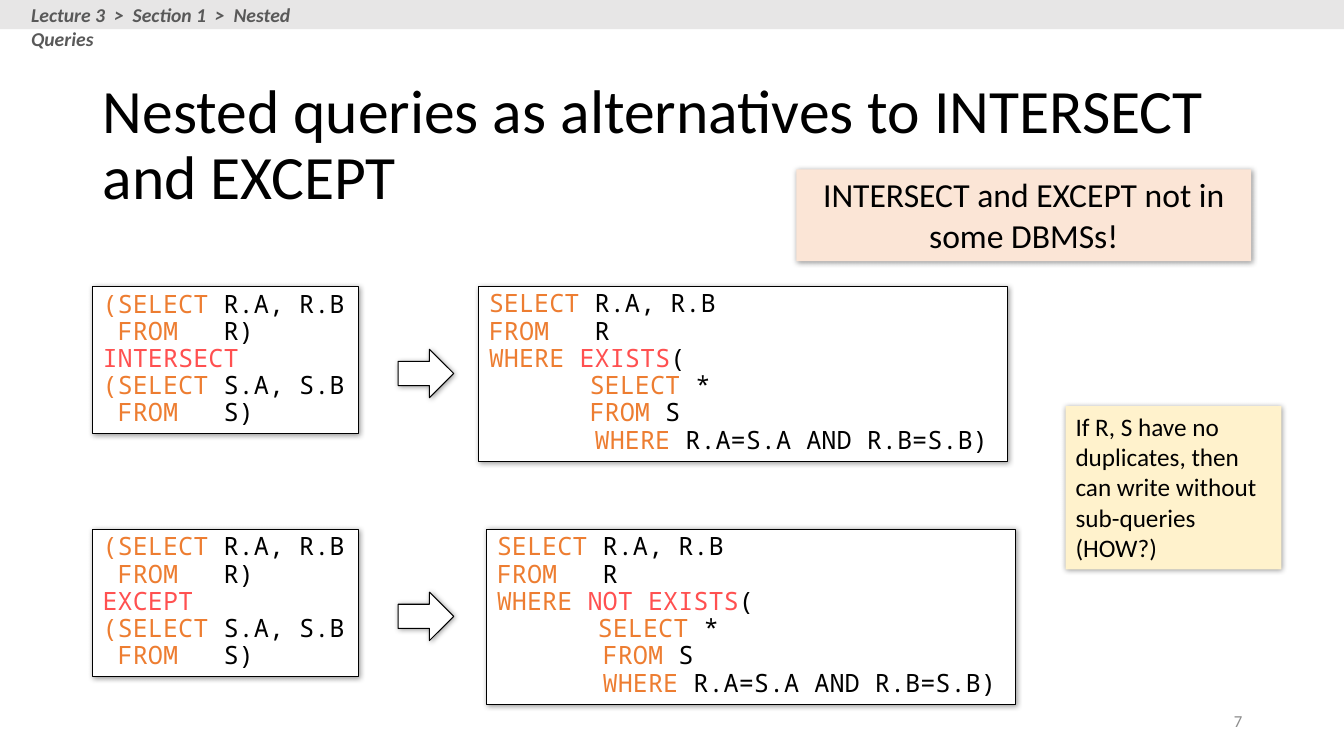
from dataclasses import dataclass

from lxml import etree
from pptx import Presentation
from pptx.dml.color import RGBColor
from pptx.enum.shapes import MSO_SHAPE
from pptx.enum.text import MSO_ANCHOR, MSO_AUTO_SIZE, PP_ALIGN
from pptx.oxml.ns import qn
from pptx.util import Inches, Pt

RECTANGLE, ARROW = MSO_SHAPE.RECTANGLE, MSO_SHAPE.RIGHT_ARROW
LEFT, CENTER, RIGHT = PP_ALIGN.LEFT, PP_ALIGN.CENTER, PP_ALIGN.RIGHT
TOP, MIDDLE = MSO_ANCHOR.TOP, MSO_ANCHOR.MIDDLE
FIXED_SIZE = MSO_AUTO_SIZE.NONE
TITLE_ONLY = 5


@dataclass(frozen=True)
class Theme:
    body_font: str = "Calibri"
    code_font: str = "Noto Sans Mono"
    ink: str = "000000"
    paper: str = "FFFFFF"
    keyword: str = "ED7D31"
    operator: str = "FF5050"
    band: str = "E7E6E6"
    crumb: str = "595959"
    number: str = "8C8C8C"
    callout: str = "FBE5D6"
    note: str = "FFF2CC"
    title_size: int = 44
    callout_size: int = 24
    text_size: int = 18
    crumb_size: int = 14
    number_size: int = 12
    tight_spacing: float = 0.9


class SlideBuilder:
    """Draws on one slide; every area is in percent of the slide's size."""

    def __init__(self, deck, theme):
        self.deck, self.theme = deck, theme
        self.page = deck.slides.add_slide(deck.slide_layouts[TITLE_ONLY])

    def area(self, left, top, width, height):
        across, down = self.deck.slide_width / 100, self.deck.slide_height / 100
        return [round(left * across), round(top * down),
                round(width * across), round(height * down)]

    def add_span(self, para, text, size, color, font=None, strong=False):
        span = para.add_run()
        span.text = text
        span.font.name = font or self.theme.body_font
        span.font.size = Pt(size)
        span.font.color.rgb = RGBColor.from_string(color)
        if strong:
            span.font.bold = span.font.italic = True

    def fill_text(self, box, text, size, color, align=LEFT, anchor=TOP, strong=False):
        frame = box.text_frame
        frame.word_wrap = True
        frame.auto_size = FIXED_SIZE
        frame.vertical_anchor = anchor
        para = frame.paragraphs[0]
        para.alignment = align
        self.add_span(para, text, size, color, strong=strong)
        return para

    def title(self, area, text):
        box = self.page.shapes.title
        box.left, box.top, box.width, box.height = self.area(*area)
        para = self.fill_text(box, text, self.theme.title_size, self.theme.ink,
                              anchor=MIDDLE)
        para.line_spacing = self.theme.tight_spacing

    def label(self, area, text, size, color, **style):
        box = self.page.shapes.add_textbox(*self.area(*area))
        self.fill_text(box, text, size, color, **style)

    def shape(self, kind, area, fill, outlined=False, shadow=True):
        box = self.page.shapes.add_shape(kind, *self.area(*area))
        box.fill.solid()
        box.fill.fore_color.rgb = RGBColor.from_string(fill)
        if outlined:
            box.line.color.rgb = RGBColor.from_string(self.theme.ink)
            box.line.width = Pt(0.75)
        else:
            box.line.fill.background()
        box.shadow.inherit = False
        if shadow:
            effects = box.element.spPr.find(qn("a:effectLst"))
            outer = etree.SubElement(effects, qn("a:outerShdw"), blurRad=str(Pt(4)),
                                     dist=str(Pt(1)), dir="2700000", rotWithShape="0")
            tone = etree.SubElement(outer, qn("a:srgbClr"), val=self.theme.ink)
            etree.SubElement(tone, qn("a:alpha"), val="40000")
        return box

    def card(self, area, fill, text, size, align=LEFT):
        self.fill_text(self.shape(RECTANGLE, area, fill), text, size,
                       self.theme.ink, align)

    def arrow(self, area):
        self.shape(ARROW, area, self.theme.paper, outlined=True)

    def code(self, area, lines):
        """Each line is an indent in inches and its (colour, text) parts."""
        frame = self.shape(RECTANGLE, area, self.theme.paper, outlined=True).text_frame
        frame.word_wrap = True
        frame.vertical_anchor = TOP
        for index, (indent, parts) in enumerate(lines):
            para = frame.add_paragraph() if index else frame.paragraphs[0]
            para.alignment = LEFT
            para.line_spacing = self.theme.tight_spacing
            if indent:
                para._p.get_or_add_pPr().set("marL", str(Inches(indent)))
            for color, text in parts:
                self.add_span(para, text, self.theme.text_size, color,
                              self.theme.code_font)


def set_query(theme, operator):
    """Two SELECT blocks joined by a set operator."""
    def block(table):
        return [(0, [(theme.keyword, "(SELECT"), (theme.ink, f" {table}.A, {table}.B")]),
                (0, [(theme.keyword, " FROM"), (theme.ink, f"   {table})")])]
    return block("R") + [(0, [(theme.operator, operator)])] + block("S")


def nested_query(theme, test, indents):
    """The same query expressed with a sub-query."""
    outer = [[(theme.keyword, "SELECT"), (theme.ink, " R.A, R.B")],
             [(theme.keyword, "FROM   "), (theme.ink, "R")],
             [(theme.keyword, "WHERE "), (theme.operator, test), (theme.ink, "(")]]
    inner = [("SELECT ", "*"), ("FROM ", "S"), ("WHERE ", "R.A=S.A AND R.B=S.B)")]
    return [(0, parts) for parts in outer] + [
        (indent, [(theme.keyword, word), (theme.ink, rest)])
        for indent, (word, rest) in zip(indents, inner)]


def main():
    deck = Presentation()
    deck.slide_width, deck.slide_height = Inches(13.33), Inches(7.5)
    theme = Theme()
    slide = SlideBuilder(deck, theme)

    # Header band, breadcrumb and title
    slide.shape(RECTANGLE, (0, 0, 100, 3.87), theme.band, shadow=False)
    slide.label((1.58, -0.27, 25.36, 4.53), "Lecture 3  >  Section 1  >  Nested Queries",
                theme.crumb_size, theme.crumb, strong=True)
    slide.title((6.9, 9.73, 86.27, 19.33),
                "Nested queries as alternatives to INTERSECT and EXCEPT")

    # One row per set operator: query, arrow, nested form
    rows = [(37.87, "INTERSECT", "EXISTS", 35.63, (1, 1, 1.05)),
            (70, "EXCEPT", "NOT EXISTS", 36.23, (1, 1.05, 1.05))]
    for top, operator, test, nested_left, indents in rows:
        slide.code((6.9, top, 19.8, 19.47), set_query(theme, operator))
        slide.arrow((29.63, top + 8.33, 4.13, 6.4))
        slide.code((nested_left, top, 39.31, 23.2), nested_query(theme, test, indents))

    # Remarks
    slide.card((59.26, 22.4, 33.83, 12.13), theme.callout,
               "INTERSECT and EXCEPT not in some DBMSs!", theme.callout_size, CENTER)
    slide.card((79.29, 53.73, 16.05, 21.6), theme.note,
               "If R, S have no duplicates, then can write without sub-queries (HOW?)",
               theme.text_size)

    # Page number
    slide.label((70.67, 92.67, 22.51, 5.33), "7", theme.number_size, theme.number,
                align=RIGHT, anchor=MIDDLE)

    deck.save("out.pptx")


if __name__ == "__main__":
    main()
